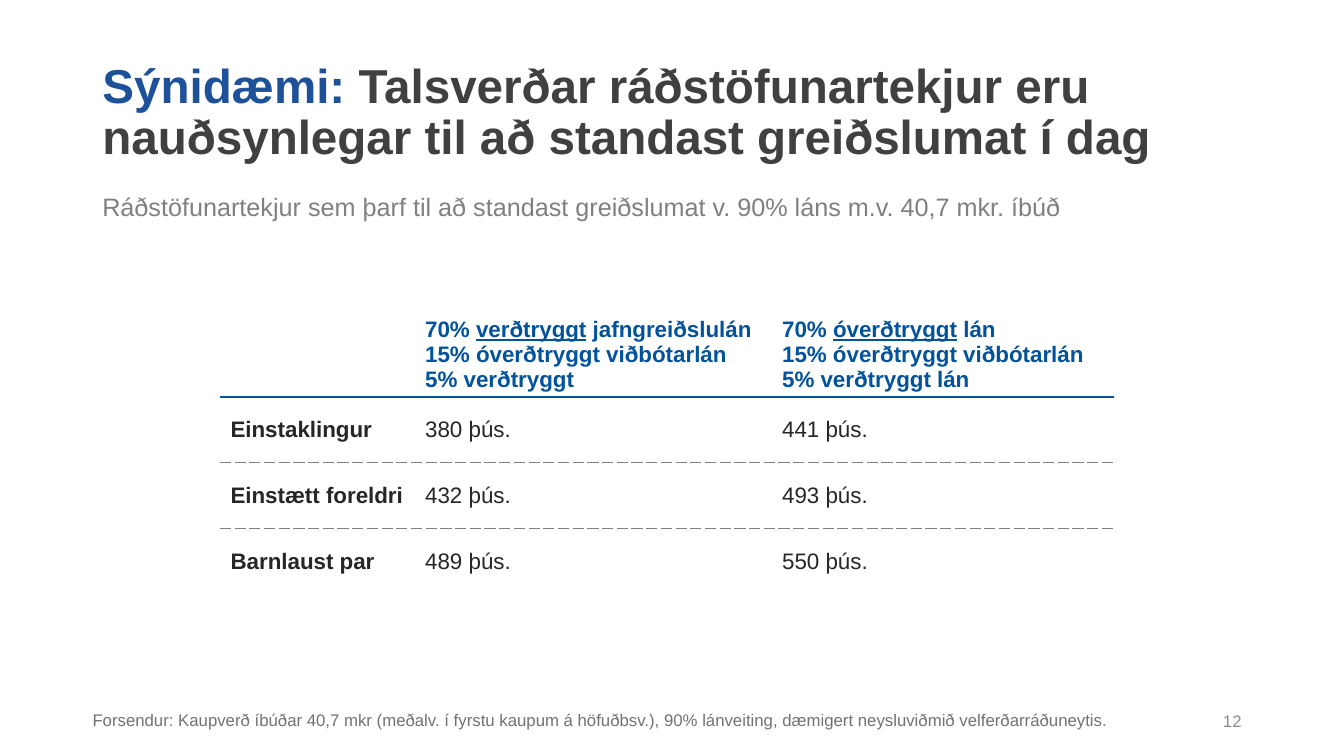
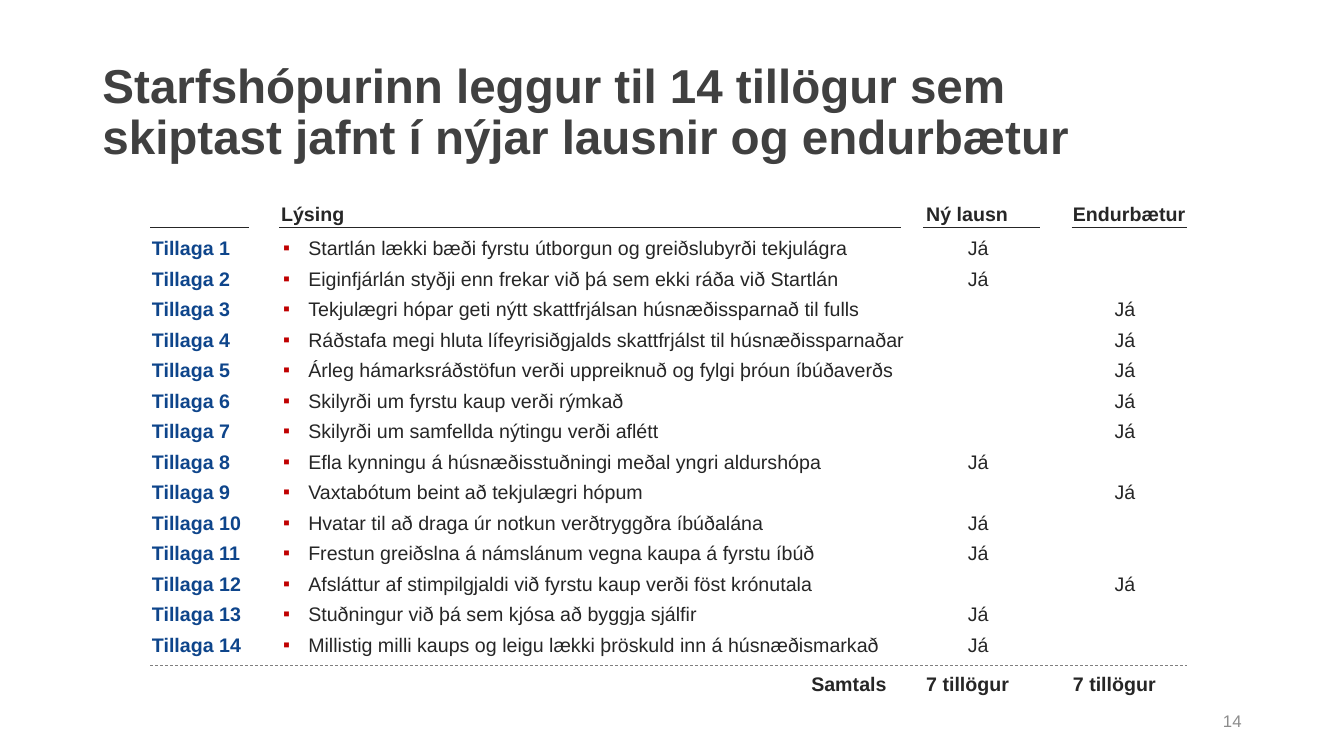
from lxml.etree import SubElement
from pptx import Presentation
from pptx.dml.color import RGBColor
from pptx.enum.dml import MSO_LINE
from pptx.enum.shapes import MSO_CONNECTOR
from pptx.enum.text import MSO_ANCHOR as Anchor, MSO_AUTO_SIZE as AutoSize, PP_ALIGN as Align
from pptx.oxml.ns import qn
from pptx.util import Pt

FONT = "Arial"
INK, GREY, DARK_GREY = "262626", "808080", "404040"
TABLE_BLUE, LABEL_BLUE, TITLE_BLUE = "02529C", "0E458B", "1D529B"
BULLET_RED, FOOTNOTE_GREY, NUMBER_GREY = "C00000", "767171", "8C8C8C"

TITLE_BOX = (66, 29, 828, 104)
TITLE_STYLE = {"size": 34, "bold": True, "color": DARK_GREY}

INCOME_TITLE = [
    ("Sýnidæmi:", {"color": TITLE_BLUE}),
    (" Talsverðar ráðstöfunartekjur eru nauðsynlegar til að standast greiðslumat í dag", {}),
]
INCOME_SUBTITLE = "Ráðstöfunartekjur sem þarf til að standast greiðslumat v. 90% láns m.v. 40,7 mkr. íbúð"
ASSUMPTIONS = (
    "Forsendur: Kaupverð íbúðar 40,7 mkr (meðalv. í fyrstu kaupum á höfuðbsv.), "
    "90% lánveiting, dæmigert neysluviðmið velferðarráðuneytis."
)
UNDERLINED = {"underline": True}
LOAN_MIXES = [
    [],
    [[("70% ", {}), ("verðtryggt", UNDERLINED), (" jafngreiðslulán", {})],
     "15% óverðtryggt viðbótarlán", "5% verðtryggt"],
    [[("70% ", {}), ("óverðtryggt", UNDERLINED), (" lán", {})],
     "15% óverðtryggt viðbótarlán", "5% verðtryggt lán"],
]
INCOMES = [
    ("Einstaklingur", "380 þús.", "441 þús."),
    ("Einstætt foreldri", "432 þús.", "493 þús."),
    ("Barnlaust par", "489 þús.", "550 þús."),
]
INCOME_COLUMNS = (139, 255, 244)
HEADER_HEIGHT, INCOME_HEIGHT = 82, 47

PROPOSALS_TITLE = [
    ("Starfshópurinn leggur til 14 tillögur sem ", {}),
    ("\v", {}),
    ("skiptast jafnt í nýjar lausnir og endurbætur", {}),
]
NEW, IMPROVED = "Ný lausn", "Endurbætur"
PROPOSALS = [
    ("Startlán lækki bæði fyrstu útborgun og greiðslubyrði tekjulágra", NEW),
    ("Eiginfjárlán styðji enn frekar við þá sem ekki ráða við Startlán", NEW),
    ("Tekjulægri hópar geti nýtt skattfrjálsan húsnæðissparnað til fulls", IMPROVED),
    ("Ráðstafa megi hluta lífeyrisiðgjalds skattfrjálst til húsnæðissparnaðar", IMPROVED),
    ("Árleg hámarksráðstöfun verði uppreiknuð og fylgi þróun íbúðaverðs", IMPROVED),
    ("Skilyrði um fyrstu kaup verði rýmkað", IMPROVED),
    ("Skilyrði um samfellda nýtingu verði aflétt", IMPROVED),
    ("Efla kynningu á húsnæðisstuðningi meðal yngri aldurshópa", NEW),
    ("Vaxtabótum beint að tekjulægri hópum", IMPROVED),
    ("Hvatar til að draga úr notkun verðtryggðra íbúðalána", NEW),
    ("Frestun greiðslna á námslánum vegna kaupa á fyrstu íbúð", NEW),
    ("Afsláttur af stimpilgjaldi við fyrstu kaup verði föst krónutala", IMPROVED),
    ("Stuðningur við þá sem kjósa að byggja sjálfir", NEW),
    ("Millistig milli kaups og leigu lækki þröskuld inn á húsnæðismarkað", NEW),
]
KIND_COLUMNS = [(NEW, 654.5), (IMPROVED, 759.3)]
KIND_WIDTH = 88.5
HEADER_RULES = [(107.3, 177.8), (199.4, 643.7), (659.5, 743), (765.4, 848.2)]
HEADER_TOP, RULE_TOP, ROWS_TOP, TOTAL_RULE_TOP, TOTAL_TOP = 140.4, 162.7, 165, 475.2, 476.6
LINE_HEIGHT, ROW_GAP = 16.8, 5
ROW_PITCH = LINE_HEIGHT + ROW_GAP
ROW_STYLE = {"size": 14, "color": INK}
ROW_SPACING = {"line_spacing": Pt(LINE_HEIGHT), "space_before": Pt(0), "space_after": Pt(ROW_GAP)}


def rgb(color):
    return RGBColor.from_string(color)


def set_all(target, values):
    for name, value in values.items():
        setattr(target, name, value)


def place(shape, left, top, width, height):
    set_all(shape, {"left": Pt(left), "top": Pt(top), "width": Pt(width), "height": Pt(height)})


def write(frame, paragraphs, style, **layout):
    """Write paragraphs, each a string or a list of (text, style changes)."""
    for index, content in enumerate(paragraphs):
        paragraph = frame.paragraphs[0] if index == 0 else frame.add_paragraph()
        set_all(paragraph, layout)
        for text, changes in [(content, {})] if isinstance(content, str) else content:
            if text == "\v":
                paragraph.add_line_break()
                continue
            look = {"name": FONT, **style, **changes}
            run = paragraph.add_run()
            run.text = text
            run.font.color.rgb = rgb(look.pop("color"))
            look["size"] = Pt(look["size"])
            set_all(run.font, look)


def add_text(slide, box, paragraphs, style, anchor=Anchor.TOP, **layout):
    frame = slide.shapes.add_textbox(*map(Pt, box)).text_frame
    set_all(frame, {"word_wrap": True, "vertical_anchor": anchor})
    write(frame, paragraphs, style, **layout)
    return frame


def add_rule(slide, left, right, top, color, dash=None):
    rule = slide.shapes.add_connector(
        MSO_CONNECTOR.STRAIGHT, Pt(left), Pt(top), Pt(right), Pt(top))
    rule.line.color.rgb = rgb(color)
    set_all(rule.line, {"width": Pt(0.5), "dash_style": dash})
    SubElement(rule._element.spPr, qn("a:effectLst"))


def add_border(cell, side, color, width, dash):
    border = SubElement(cell._tc.get_or_add_tcPr(), qn(f"a:ln{side}"), w=str(Pt(width)))
    fill = SubElement(border, qn("a:solidFill"))
    SubElement(fill, qn("a:srgbClr"), val=color)
    SubElement(border, qn("a:prstDash"), val=dash)


def add_bullet(paragraph):
    properties = paragraph._p.get_or_add_pPr()
    properties.set("marL", str(Pt(18)))
    properties.set("indent", str(-Pt(18)))
    color = SubElement(properties, qn("a:buClr"))
    SubElement(color, qn("a:srgbClr"), val=BULLET_RED)
    SubElement(properties, qn("a:buChar"), char="▪")


def style_master(master):
    title = master.placeholders[0]
    place(title, *TITLE_BOX)
    set_all(title.text_frame, {"auto_size": AutoSize.NONE, "vertical_anchor": Anchor.MIDDLE})
    level = master._element.find(".//" + qn("p:titleStyle")).find(qn("a:lvl1pPr"))
    level.set("algn", "l")
    defaults = level.find(qn("a:defRPr"))
    defaults.set("sz", str(TITLE_STYLE["size"] * 100))
    defaults.set("b", "1")
    defaults.find(qn("a:latin")).set("typeface", FONT)


def start_slide(prs, layout, title, number):
    slide = prs.slides.add_slide(prs.slide_layouts.get_by_name(layout))
    write(slide.shapes.title.text_frame, [title], TITLE_STYLE, line_spacing=0.9)
    add_text(slide, (678, 500.4, 216, 29), [str(number)], {"size": 12, "color": NUMBER_GREY},
             Anchor.MIDDLE, alignment=Align.RIGHT)
    return slide


def add_income_table(slide):
    heights = [HEADER_HEIGHT] + [INCOME_HEIGHT] * len(INCOMES)
    table = slide.shapes.add_table(
        len(heights), len(INCOME_COLUMNS), Pt(157.5), Pt(201.6),
        Pt(sum(INCOME_COLUMNS)), Pt(sum(heights))).table
    set_all(table, {"first_row": False, "horz_banding": False})
    for column, width in zip(table.columns, INCOME_COLUMNS):
        column.width = Pt(width)
    for row, height in zip(table.rows, heights):
        row.height = Pt(height)

    header_rule, row_rule = (TABLE_BLUE, 2.25, "solid"), (GREY, 1, "sysDash")
    rules = [None, header_rule] + [row_rule] * (len(INCOMES) - 1) + [None]
    contents = [LOAN_MIXES] + [[[text] for text in row] for row in INCOMES]
    for r, row in enumerate(contents):
        for c, paragraphs in enumerate(row):
            cell = table.cell(r, c)
            for side, rule in (("T", rules[r]), ("B", rules[r + 1])):
                if rule:
                    add_border(cell, side, *rule)
            cell.fill.background()
            cell.vertical_anchor = Anchor.MIDDLE if r else Anchor.BOTTOM
            write(cell.text_frame, paragraphs,
                  {"size": 16, "bold": r == 0 or c == 0, "color": INK if r else TABLE_BLUE})


def add_kind_column(slide, kind, left):
    """Header, a mark beside each proposal of this kind, and the total."""
    bold = {**ROW_STYLE, "bold": True}
    rows = [row for row, (_, found) in enumerate(PROPOSALS) if found == kind]
    add_text(slide, (left, HEADER_TOP, 109, 24.5), [kind], bold)
    add_text(slide, (left, TOTAL_TOP, 109, 24.5), [f"{len(rows)} tillögur"], bold)
    top = ROWS_TOP + rows[0] * ROW_PITCH
    marks = add_text(slide, (left, top, KIND_WIDTH, 454 - top), ["Já"] * len(rows), ROW_STYLE,
                     alignment=Align.CENTER, **ROW_SPACING)
    for paragraph, row, following in zip(marks.paragraphs, rows, rows[1:]):
        paragraph.space_after = Pt(round(ROW_GAP + (following - row - 1) * ROW_PITCH, 2))


def build_income_slide(prs):
    slide = start_slide(prs, "Title Only", INCOME_TITLE, 12)
    add_income_table(slide)
    add_text(slide, (59, 503.3, 841, 22), [ASSUMPTIONS], {"size": 12, "color": FOOTNOTE_GREY})
    add_text(slide, (66, 133.2, 894, 29), [INCOME_SUBTITLE], {"size": 18, "color": GREY})


def build_proposals_slide(prs):
    slide = start_slide(prs, "Title and Content", PROPOSALS_TITLE, 14)
    descriptions = slide.placeholders[1]
    place(descriptions, 195, ROWS_TOP, 554, 310)
    frame = descriptions.text_frame
    frame.auto_size = AutoSize.NONE
    write(frame, [text for text, _ in PROPOSALS], ROW_STYLE, **ROW_SPACING)
    for paragraph in frame.paragraphs:
        add_bullet(paragraph)

    labels = [f"Tillaga {number}" for number in range(1, len(PROPOSALS) + 1)]
    add_text(slide, (101.5, ROWS_TOP, 93.5, 310), labels,
             {"size": 14, "bold": True, "color": LABEL_BLUE}, **ROW_SPACING)
    bold = {**ROW_STYLE, "bold": True}
    add_text(slide, (193.7, HEADER_TOP, 94, 24.5), ["Lýsing"], bold)
    add_text(slide, (572.4, TOTAL_TOP, 79, 24.5), ["Samtals"], bold)
    for kind, left in KIND_COLUMNS:
        add_kind_column(slide, kind, left)
    for left, right in HEADER_RULES:
        add_rule(slide, left, right, RULE_TOP, INK)
    add_rule(slide, HEADER_RULES[0][0], HEADER_RULES[-1][1], TOTAL_RULE_TOP, GREY, MSO_LINE.DASH)


def main():
    prs = Presentation()
    set_all(prs, {"slide_width": Pt(960), "slide_height": Pt(540)})
    style_master(prs.slide_master)
    build_income_slide(prs)
    build_proposals_slide(prs)
    prs.save("out.pptx")


if __name__ == "__main__":
    main()
